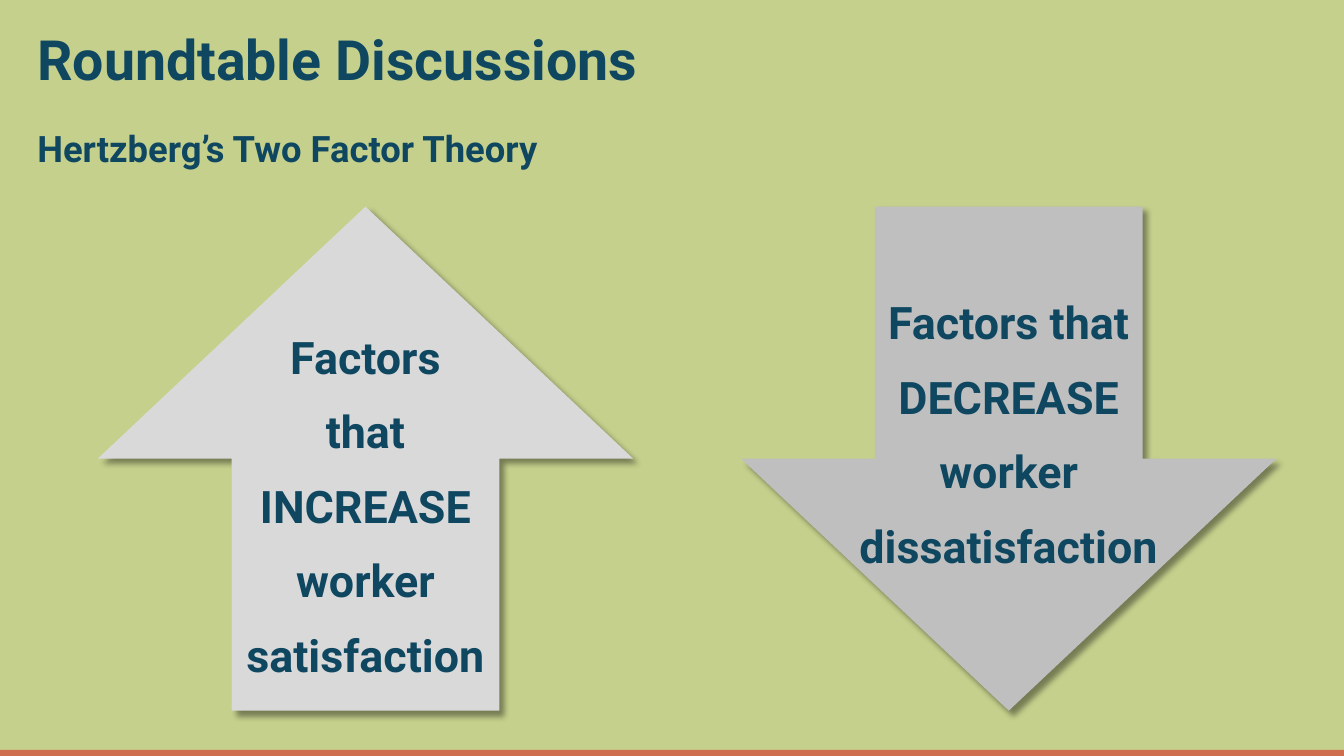
from dataclasses import dataclass

from lxml import etree
from pptx import Presentation
from pptx.dml.color import RGBColor
from pptx.enum.shapes import MSO_SHAPE
from pptx.enum.text import MSO_ANCHOR, PP_ALIGN
from pptx.oxml.ns import qn
from pptx.util import Inches, Pt

UP_ARROW = MSO_SHAPE.UP_ARROW
RECTANGLE = MSO_SHAPE.RECTANGLE
TOP = MSO_ANCHOR.TOP
LEFT, CENTER = PP_ALIGN.LEFT, PP_ALIGN.CENTER

FONT = "Roboto"
COLORS = {
    "background": "C5D08C",
    "text": "0F4761",
    "increase": "D9D9D9",
    "decrease": "BFBFBF",
    "footer": "CF6D4F",
    "shadow": "000000",
}


@dataclass(frozen=True)
class Box:
    left: float
    top: float
    width: float
    height: float

    def lengths(self) -> tuple:
        return tuple(Inches(v) for v in (self.left, self.top, self.width, self.height))


@dataclass(frozen=True)
class Label:
    text: str
    box: Box
    size: float
    align: int = LEFT
    spacing: object = 1.0


@dataclass(frozen=True)
class Factor:
    label: Label
    arrow: Box
    color: str
    rotation: int


def factor_label(text: str, box: Box) -> Label:
    return Label(text, box, 32, CENTER, Pt(53.3))


HEADINGS = (
    Label("Roundtable Discussions", Box(0.24, 0.19, 12.42, 0.84), 39.6, spacing=0.9),
    Label("Hertzberg’s Two Factor Theory", Box(0.24, 1.12, 12.42, 0.84), 26),
)
FACTORS = (
    Factor(
        factor_label("Factors that INCREASE worker satisfaction", Box(2.3, 2.93, 2.65, 3.99)),
        Box(0.97, 2.05, 5.31, 5), "increase", 0,
    ),
    Factor(
        factor_label("Factors that DECREASE worker dissatisfaction", Box(8.34, 2.59, 3.33, 3.24)),
        Box(7.35, 2.05, 5.31, 5), "decrease", 180,
    ),
)
FOOTER = Box(0, 7.44, 13.33, 0.06)


def rgb(name: str) -> RGBColor:
    return RGBColor.from_string(COLORS[name])


def add_label(shapes, label: Label) -> None:
    textbox = shapes.add_textbox(*label.box.lengths())
    frame = textbox.text_frame
    frame.word_wrap = True
    frame.vertical_anchor = TOP
    frame.margin_left = frame.margin_right = Inches(0.13)
    frame.margin_top = frame.margin_bottom = Inches(0.13)
    paragraph = frame.paragraphs[0]
    paragraph.alignment = label.align
    paragraph.line_spacing = label.spacing
    run = paragraph.add_run()
    run.text = label.text
    run.font.name = FONT
    run.font.size = Pt(label.size)
    run.font.bold = True
    run.font.color.rgb = rgb("text")


def add_filled(shapes, preset, box: Box, color: str):
    shape = shapes.add_shape(preset, *box.lengths())
    shape.shadow.inherit = False
    shape.fill.solid()
    shape.fill.fore_color.rgb = rgb(color)
    shape.line.fill.background()
    return shape


def cast_shadow(shape) -> None:
    effects = shape.element.spPr.find(qn("a:effectLst"))
    shadow = etree.SubElement(
        effects, qn("a:outerShdw"), blurRad=str(Pt(4)), dist=str(Pt(5)),
        dir=str(45 * 60000), algn="tl", rotWithShape="0",
    )
    color = etree.SubElement(shadow, qn("a:srgbClr"), val=COLORS["shadow"])
    etree.SubElement(color, qn("a:alpha"), val="40000")


def add_factor(shapes, factor: Factor) -> None:
    group = shapes.add_group_shape()
    arrow = add_filled(group.shapes, UP_ARROW, factor.arrow, factor.color)
    arrow.rotation = factor.rotation
    cast_shadow(arrow)
    add_label(group.shapes, factor.label)


def main() -> None:
    """Build the two-factor theory discussion slide."""
    deck = Presentation()
    deck.slide_width, deck.slide_height = Inches(13.33), Inches(7.5)
    slide = deck.slides.add_slide(deck.slide_layouts[6])
    slide.background.fill.solid()
    slide.background.fill.fore_color.rgb = rgb("background")

    for heading in HEADINGS:
        add_label(slide.shapes, heading)
    for factor in FACTORS:
        add_factor(slide.shapes, factor)
    add_filled(slide.shapes, RECTANGLE, FOOTER, "footer")
    deck.save("out.pptx")


if __name__ == "__main__":
    main()
